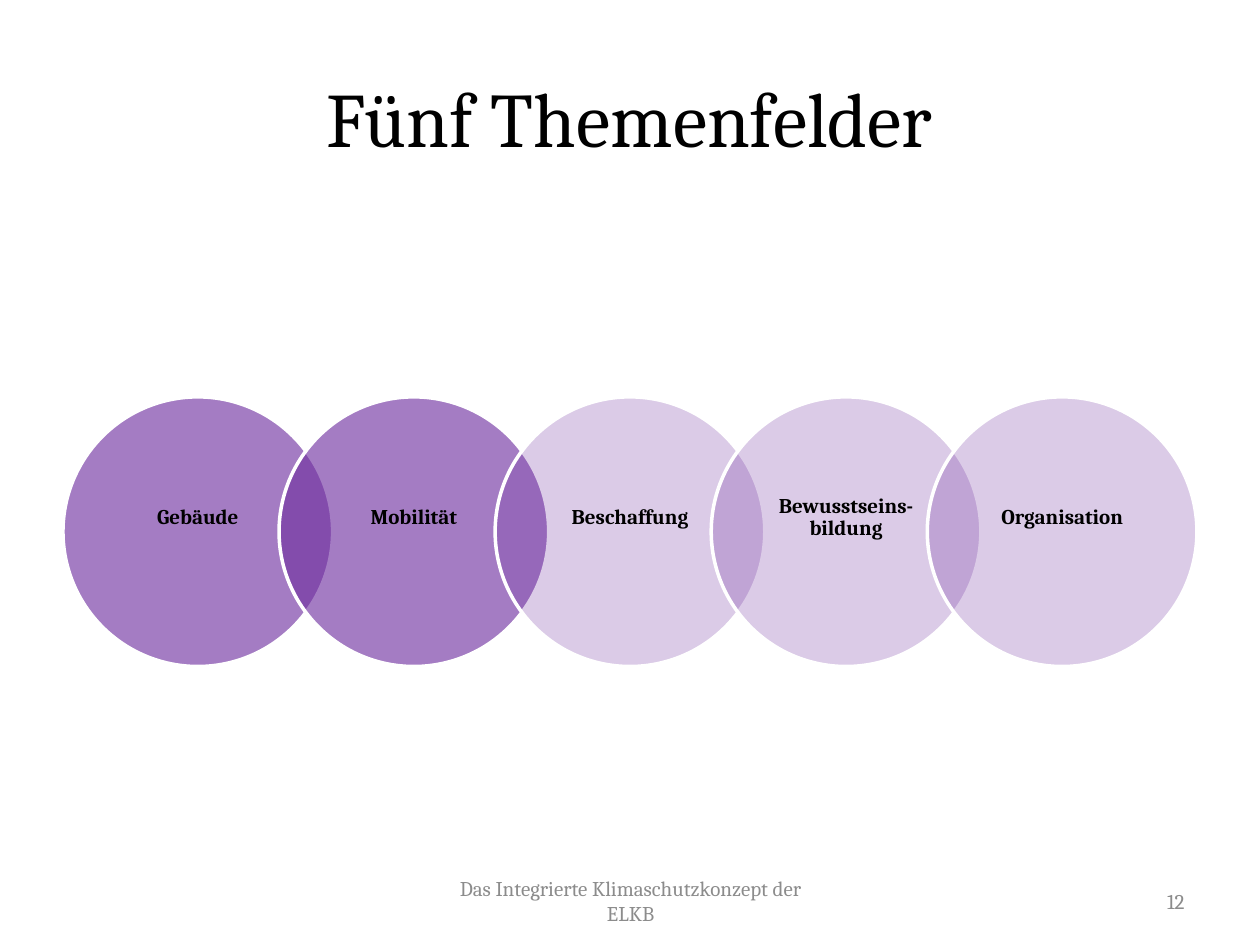
from lxml import etree
from pptx import Presentation
from pptx.dml.color import RGBColor
from pptx.enum.shapes import MSO_SHAPE
from pptx.enum.text import MSO_ANCHOR, PP_ALIGN
from pptx.oxml.ns import qn
from pptx.util import Inches, Pt

FONT = "Cambria"
PURPLE = RGBColor(0x70, 0x30, 0xA0)
WHITE = RGBColor(0xFF, 0xFF, 0xFF)
BLACK = RGBColor(0x00, 0x00, 0x00)
GRAY = RGBColor(0x8C, 0x8C, 0x8C)

# Label and opacity in percent of each topic
TOPICS = [
    ("Gebäude", 63),
    ("Mobilität", 63),
    ("Beschaffung", 25),
    ("Bewusstseins-bildung", 25),
    ("Organisation", 25),
]


def write_text(shape, text, size, color, alignment, bold=False):
    frame = shape.text_frame
    frame.word_wrap = True
    frame.vertical_anchor = MSO_ANCHOR.MIDDLE
    paragraph = frame.paragraphs[0]
    paragraph.alignment = alignment
    run = paragraph.add_run()
    run.text = text
    run.font.name = FONT
    run.font.size = Pt(size)
    run.font.bold = bold
    run.font.color.rgb = color
    return paragraph


def add_title(slide, text, left, top, width, height):
    title = slide.shapes.title
    title.left, title.top, title.width, title.height = left, top, width, height
    write_text(title, text, 44, BLACK, PP_ALIGN.CENTER)


def add_circle(slide, left, top, diameter, opacity):
    circle = slide.shapes.add_shape(MSO_SHAPE.OVAL, left, top, diameter, diameter)
    circle.shadow.inherit = False
    circle.fill.solid()
    circle.fill.fore_color.rgb = PURPLE
    color = circle.fill._xPr.find(qn("a:solidFill")).find(qn("a:srgbClr"))
    etree.SubElement(color, qn("a:alpha")).set("val", str(opacity * 1000))
    circle.line.color.rgb = WHITE
    circle.line.width = Pt(2)


def add_label(slide, text, left, top, size):
    label = slide.shapes.add_textbox(left, top, size, size)
    frame = label.text_frame
    frame.margin_left = frame.margin_right = Inches(0.12)
    frame.margin_top = Inches(0.02)
    frame.margin_bottom = Inches(0.24)  # lifts the label above the centre
    paragraph = write_text(label, text, 12, BLACK, PP_ALIGN.CENTER, bold=True)
    paragraph.line_spacing = 0.9


def add_topic_chain(slide, left, top, width, diameter):
    # Overlapping circles spread evenly across the width
    step = (width - diameter) / (len(TOPICS) - 1)
    inset = Inches(0.315)
    for index, (text, opacity) in enumerate(TOPICS):
        circle_left = int(left + index * step)
        add_circle(slide, circle_left, top, diameter, opacity)
        add_label(slide, text, circle_left + inset, top + inset, diameter - 2 * inset)


def add_footer(slide, left, top, width, height):
    footer = slide.shapes.add_textbox(left + Inches(2.92), top, Inches(3.17), height)
    write_text(footer, "Das Integrierte Klimaschutzkonzept der ELKB", 12, GRAY,
               PP_ALIGN.CENTER)
    number_width = Inches(2.33)
    number = slide.shapes.add_textbox(left + width - number_width, top,
                                      number_width, height)
    write_text(number, "12", 12, GRAY, PP_ALIGN.RIGHT)


def main():
    presentation = Presentation()
    presentation.slide_width = Inches(10)
    presentation.slide_height = Inches(7.5)
    slide = presentation.slides.add_slide(presentation.slide_layouts[5])

    left, width = Inches(0.5), Inches(9)
    add_title(slide, "Fünf Themenfelder", left, Inches(0.3), width, Inches(1.25))
    add_topic_chain(slide, left, Inches(3.15), width, Inches(2.14))
    add_footer(slide, left, Inches(6.95), width, Inches(0.4))

    presentation.save("out.pptx")


if __name__ == "__main__":
    main()
